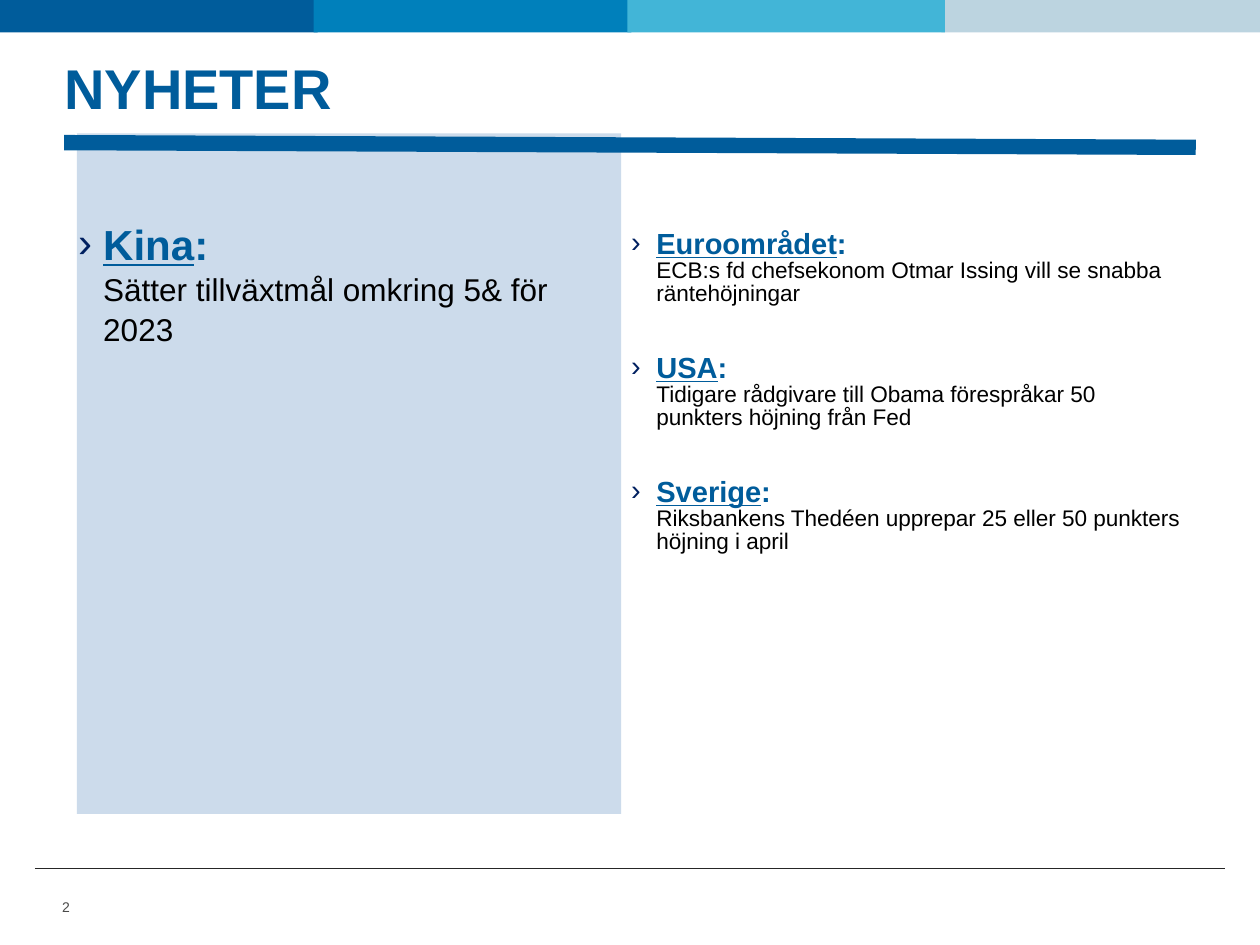
from lxml import etree
from pptx import Presentation
from pptx.dml.color import RGBColor
from pptx.enum.shapes import MSO_CONNECTOR, MSO_SHAPE
from pptx.enum.text import MSO_ANCHOR, MSO_AUTO_SIZE, PP_ALIGN
from pptx.oxml.ns import qn
from pptx.util import Pt

RECT = MSO_SHAPE.RECTANGLE
LINE = MSO_CONNECTOR.STRAIGHT
TOP, MIDDLE = MSO_ANCHOR.TOP, MSO_ANCHOR.MIDDLE
LEFT, CENTER = PP_ALIGN.LEFT, PP_ALIGN.CENTER
FIXED = MSO_AUTO_SIZE.NONE

COLORS = {
    "navy": "005C9B", "blue": "0080BB", "sky": "42B5D7", "mist": "BCD4E0",
    "panel": "CCDBEB", "mark": "002060", "rule": "262626",
    "gray": "4A4A49", "black": "000000",
}


def write(para, text, size=18, color="black", bold=False, under=False):
    run = para.add_run()
    run.text = text
    font = run.font
    font.name, font.size = "Arial", Pt(size)
    font.bold, font.underline = bold, under
    font.color.rgb = RGBColor.from_string(COLORS[color])


def place(shape, left, top, width, height, inset=3.6):
    """Set a text shape's frame; inset is its top margin."""
    shape.left, shape.top = Pt(left), Pt(top)
    shape.width, shape.height = Pt(width), Pt(height)
    frame = shape.text_frame
    frame.word_wrap, frame.auto_size = True, FIXED
    frame.vertical_anchor = TOP
    frame.margin_left, frame.margin_right = 0, Pt(7.2)
    frame.margin_top, frame.margin_bottom = Pt(inset), Pt(3.6)
    return frame


prs = Presentation()
prs.slide_width, prs.slide_height = Pt(720), Pt(540)
slide = prs.slides.add_slide(prs.slide_layouts[3])
shapes = slide.shapes
title, china, world = slide.placeholders

# Top band and left panel
blocks = [
    ("navy", 0, 0, 181.5, 18.5),
    ("blue", 179.25, 0, 181.5, 18.5),
    ("mist", 538, 0, 182, 18.5),
    ("sky", 358.5, 0, 181.5, 18.5),
    ("panel", 44, 76.3, 311, 388.8),
]
for color, *box in blocks:
    block = shapes.add_shape(RECT, *map(Pt, box))
    block.shadow.inherit = False
    block.fill.solid()
    block.fill.fore_color.rgb = RGBColor.from_string(COLORS[color])
    block.line.fill.background()

# Title rule and footer rule
rules = [
    ("rule", 0.25, 20, 496, 700, 496),
    ("navy", 8.75, 683.3, 84.2, 36.7, 81.5),
]
for color, width, *ends in rules:
    rule = shapes.add_connector(LINE, *map(Pt, ends))
    rule.line.color.rgb = RGBColor.from_string(COLORS[color])
    rule.line.width = Pt(width)
    etree.SubElement(rule._element.spPr, qn("a:effectLst"))

# Page number
number = shapes.add_textbox(0, 0, 0, 0)
frame = place(number, 23.8, 507.6, 28, 20.9)
frame.margin_right = 0
frame.vertical_anchor = MIDDLE
frame.paragraphs[0].alignment = CENTER
write(frame.paragraphs[0], "2", size=8, color="gray")

# News lists
lists = [
    (china, (44.6, 87.8, 308.2, 393.8, 35.4), 24, 18, 1.05, [
        ("Kina", "Sätter tillväxtmål omkring 5& för 2023"),
    ]),
    (world, (360.7, 72.7, 322.6, 374.4, 59.2), 16.6, 12.9, 0.85, [
        ("Euroområdet",
         "ECB:s fd chefsekonom Otmar Issing vill se snabba räntehöjningar"),
        ("USA",
         "Tidigare rådgivare till Obama förespråkar 50 punkters höjning från Fed"),
        ("Sverige",
         "Riksbankens Thedéen upprepar 25 eller 50 punkters höjning i april"),
    ]),
]
for holder, box, big, small, pitch, items in lists:
    frame = place(holder, *box)
    for i, (region, news) in enumerate(items):
        para = frame.add_paragraph() if i else frame.paragraphs[0]
        para.line_spacing = pitch
        para.space_before = Pt(27.5 if i else 0)
        props = para._p.get_or_add_pPr()
        props.set("marL", str(Pt(14.4)))
        props.set("indent", str(-Pt(14.4)))
        tint = etree.SubElement(props, qn("a:buClr"))
        etree.SubElement(tint, qn("a:srgbClr"), val=COLORS["mark"])
        etree.SubElement(props, qn("a:buChar"), char="›")
        write(para, region, size=big, color="navy", bold=True, under=True)
        write(para, ":", size=big, color="navy", bold=True)
        para.add_line_break()
        write(para, news, size=small)

# Title
para = place(title, 36.7, 37.4, 646.6, 56.9).paragraphs[0]
para.alignment = LEFT
para.line_spacing = Pt(28)
write(para, "NYHETER", size=32, color="navy", bold=True)

# Bring the text in front of the panel
for holder in (world, china, title):
    shapes._spTree.append(holder._element)

prs.save("out.pptx")
